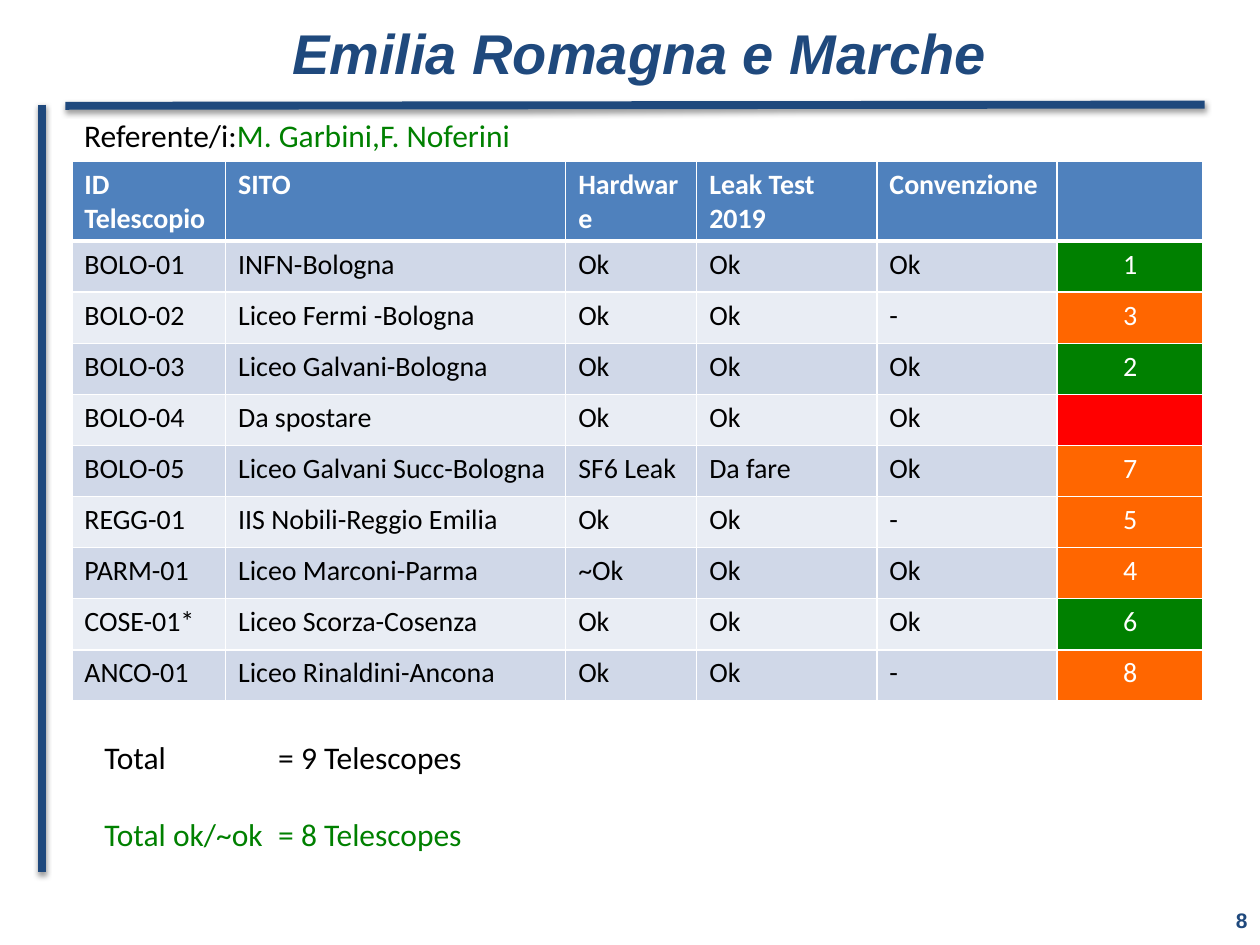
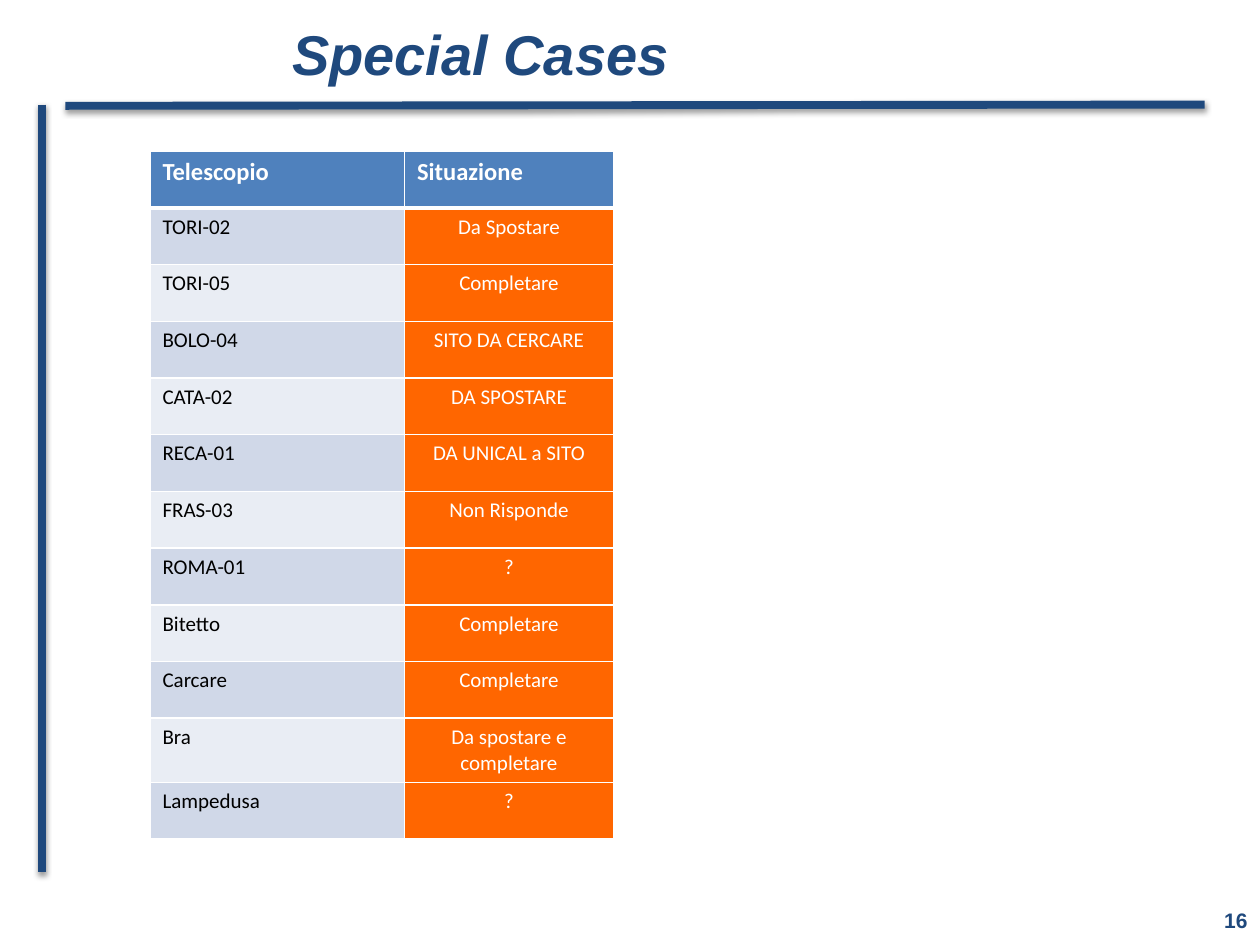
from lxml import etree
from pptx import Presentation
from pptx.dml.color import RGBColor
from pptx.enum.shapes import MSO_CONNECTOR
from pptx.enum.text import MSO_ANCHOR, PP_ALIGN
from pptx.oxml import parse_xml
from pptx.oxml.ns import nsdecls, qn
from pptx.util import Inches, Pt

NAVY = RGBColor(0x1F, 0x49, 0x7D)
HEADER_BLUE = RGBColor(0x4F, 0x81, 0xBD)
BANDS = (RGBColor(0xD0, 0xD8, 0xE8), RGBColor(0xE9, 0xED, 0xF4))
GREEN = RGBColor(0x00, 0x80, 0x00)
ORANGE = RGBColor(0xFF, 0x66, 0x00)
RED = RGBColor(0xFF, 0x00, 0x00)
BLACK = RGBColor(0, 0, 0)
WHITE = RGBColor(0xFF, 0xFF, 0xFF)

TITLE = dict(name="Arial", size=Pt(32), bold=True, italic=True, color=NAVY)
PAGE_NUMBER = dict(name="Arial", size=Pt(12), bold=True, color=NAVY)
BODY = dict(name="Calibri", size=Pt(18), color=BLACK)
BODY_GREEN = {**BODY, "color": GREEN}

RULES = [(0.52, 0.84, 9.56, 0.83), (0.33, 0.83, 0.33, 6.92)]
SHADOW = (
    f'<a:effectLst {nsdecls("a")}><a:outerShdw blurRad="40000" dist="20000" '
    'dir="5400000" rotWithShape="0"><a:srgbClr val="000000">'
    '<a:alpha val="38000"/></a:srgbClr></a:outerShdw></a:effectLst>'
)

SITE_COLS = [1.22, 2.7, 1.04, 1.43, 1.43, 1.16]
SITE_HEADER = ["ID Telescopio", "SITO", "Hardware", "Leak Test 2019", "Convenzione", ""]
SITES = [
    ("BOLO-01", "INFN-Bologna", "Ok", "Ok", "Ok", "1", GREEN),
    ("BOLO-02", "Liceo Fermi -Bologna", "Ok", "Ok", "-", "3", ORANGE),
    ("BOLO-03", "Liceo Galvani-Bologna", "Ok", "Ok", "Ok", "2", GREEN),
    ("BOLO-04", "Da spostare", "Ok", "Ok", "Ok", "", RED),
    ("BOLO-05", "Liceo Galvani Succ-Bologna", "SF6 Leak", "Da fare", "Ok", "7", ORANGE),
    ("REGG-01", "IIS Nobili-Reggio Emilia", "Ok", "Ok", "-", "5", ORANGE),
    ("PARM-01", "Liceo Marconi-Parma", "~Ok", "Ok", "Ok", "4", ORANGE),
    ("COSE-01*", "Liceo Scorza-Cosenza", "Ok", "Ok", "Ok", "6", GREEN),
    ("ANCO-01", "Liceo Rinaldini-Ancona", "Ok", "Ok", "-", "8", ORANGE),
]

CASE_COLS = [2.02, 1.66]
CASE_HEADER = ["Telescopio", "Situazione"]
CASES = [
    ("TORI-02", "Da Spostare"),
    ("TORI-05", "Completare"),
    ("BOLO-04", "SITO DA CERCARE"),
    ("CATA-02", "DA SPOSTARE"),
    ("RECA-01", "DA UNICAL a SITO"),
    ("FRAS-03", "Non Risponde"),
    ("ROMA-01", "?"),
    ("Bitetto", "Completare"),
    ("Carcare", "Completare"),
    ("Bra", "Da spostare e completare"),
    ("Lampedusa", "?"),
]


def add_run(p, text, fmt):
    r = p.add_run()
    r.text = text
    for key, value in fmt.items():
        if key == "color":
            r.font.color.rgb = value
        else:
            setattr(r.font, key, value)


def add_text(slide, box, paragraphs, anchor=MSO_ANCHOR.TOP, align=PP_ALIGN.LEFT):
    """Add a text box; each paragraph is a list of (text, format) runs."""
    tf = slide.shapes.add_textbox(*map(Inches, box)).text_frame
    tf.word_wrap = True
    tf.vertical_anchor = anchor
    for i, runs in enumerate(paragraphs):
        p = tf.add_paragraph() if i else tf.paragraphs[0]
        p.alignment = align
        for text, fmt in runs:
            add_run(p, text, fmt)
    return tf


def add_rule(slide, ends):
    line = slide.shapes.add_connector(MSO_CONNECTOR.STRAIGHT, *map(Inches, ends))
    line.line.color.rgb = NAVY
    line.line.width = Pt(4.5)
    line._element.spPr.append(parse_xml(SHADOW))


def add_frame_slide(prs, title, number, title_top=0):
    """Add a slide with the rules, title and page number all slides share."""
    slide = prs.slides.add_slide(prs.slide_layouts[6])
    for ends in RULES:
        add_rule(slide, ends)
    add_text(slide, (2.22, title_top, 7.1, 0.83), [[(title, TITLE)]], MSO_ANCHOR.MIDDLE)
    add_text(slide, (7.67, 7.1, 2.33, 0.4), [[(str(number), PAGE_NUMBER)]],
             MSO_ANCHOR.MIDDLE, PP_ALIGN.RIGHT)
    return slide


def set_borders(cell, top, bottom):
    tcPr = cell._tc.get_or_add_tcPr()
    for i, (side, width) in enumerate(zip("LRTB", (1, 1, top, bottom))):
        ln = etree.Element(qn(f"a:ln{side}"), w=str(Pt(width)))
        fill = etree.SubElement(ln, qn("a:solidFill"))
        etree.SubElement(fill, qn("a:srgbClr"), val=str(WHITE))
        tcPr.insert(i, ln)


def fill_cell(cell, text, fill, color, size, bold=False, align=PP_ALIGN.LEFT):
    cell.fill.solid()
    cell.fill.fore_color.rgb = fill
    p = cell.text_frame.paragraphs[0]
    p.alignment = align
    if text:
        add_run(p, text, dict(name="Calibri", size=Pt(size), bold=bold, color=color))


def add_status_table(slide, left, top, cols, heights, header, rows, statuses, sizes):
    """Add a banded table whose last column is coloured by status."""
    table = slide.shapes.add_table(
        len(heights), len(cols), Inches(left), Inches(top),
        Inches(sum(cols)), Inches(sum(heights))).table
    for column, width in zip(table.columns, cols):
        column.width = Inches(width)
    for row, height in zip(table.rows, heights):
        row.height = Inches(height)
    for c, text in enumerate(header):
        fill_cell(table.cell(0, c), text, HEADER_BLUE, WHITE, sizes[0], bold=True)
        set_borders(table.cell(0, c), 1, 3)
    for i, (values, status) in enumerate(zip(rows, statuses)):
        for c, text in enumerate(values):
            cell = table.cell(i + 1, c)
            if c == len(cols) - 1:
                fill_cell(cell, text, status, WHITE, sizes[1], align=PP_ALIGN.CENTER)
            else:
                fill_cell(cell, text, BANDS[i % 2], BLACK, sizes[1])
            set_borders(cell, 1 if i else 3, 1)


def add_totals(slide, box):
    tf = add_text(slide, box, [
        [("Total\t= 9 Telescopes", BODY)],
        [("Total ok/~ok\t= 8 Telescopes", BODY_GREEN)],
    ])
    for p in tf.paragraphs:
        tabs = etree.SubElement(p._p.get_or_add_pPr(), qn("a:tabLst"))
        etree.SubElement(tabs, qn("a:tab"), pos=str(Inches(1.38)), algn="l")
    tf.paragraphs[1].space_before = Pt(22)


def build_region_slide(prs):
    slide = add_frame_slide(prs, "Emilia Romagna e Marche", 8)
    add_text(slide, (0.57, 0.87, 7.01, 0.4),
             [[("Referente/i:", BODY), ("M. Garbini,F. Noferini", BODY_GREEN)]])
    heights = [0.63] + [3.65 / len(SITES)] * len(SITES)
    add_status_table(slide, 0.57, 1.28, SITE_COLS, heights, SITE_HEADER,
                     [site[:-1] for site in SITES], [site[-1] for site in SITES], (16, 16))
    add_totals(slide, (0.73, 5.81, 5.79, 1.01))


def build_special_cases_slide(prs):
    slide = add_frame_slide(prs, "Special Cases", 16, title_top=0.01)
    heights = [0.51 if case[0] == "Bra" else 0.45 for case in [CASE_HEADER, *CASES]]
    add_status_table(slide, 1.19, 1.2, CASE_COLS, heights, CASE_HEADER,
                     CASES, [ORANGE] * len(CASES), (14, 12))


def main():
    prs = Presentation()
    prs.slide_width, prs.slide_height = Inches(10), Inches(7.5)
    build_region_slide(prs)
    build_special_cases_slide(prs)
    prs.save("out.pptx")


if __name__ == "__main__":
    main()
